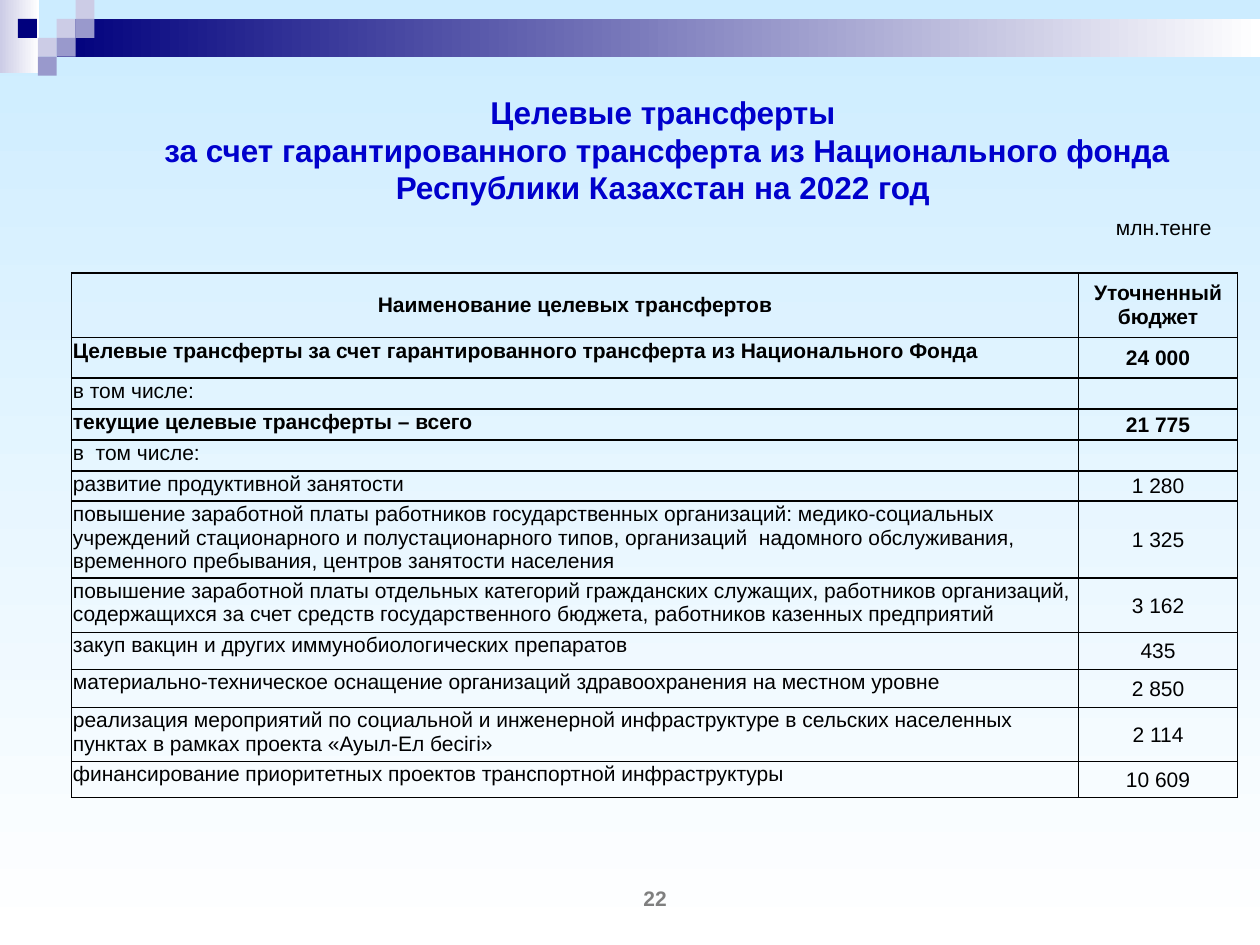
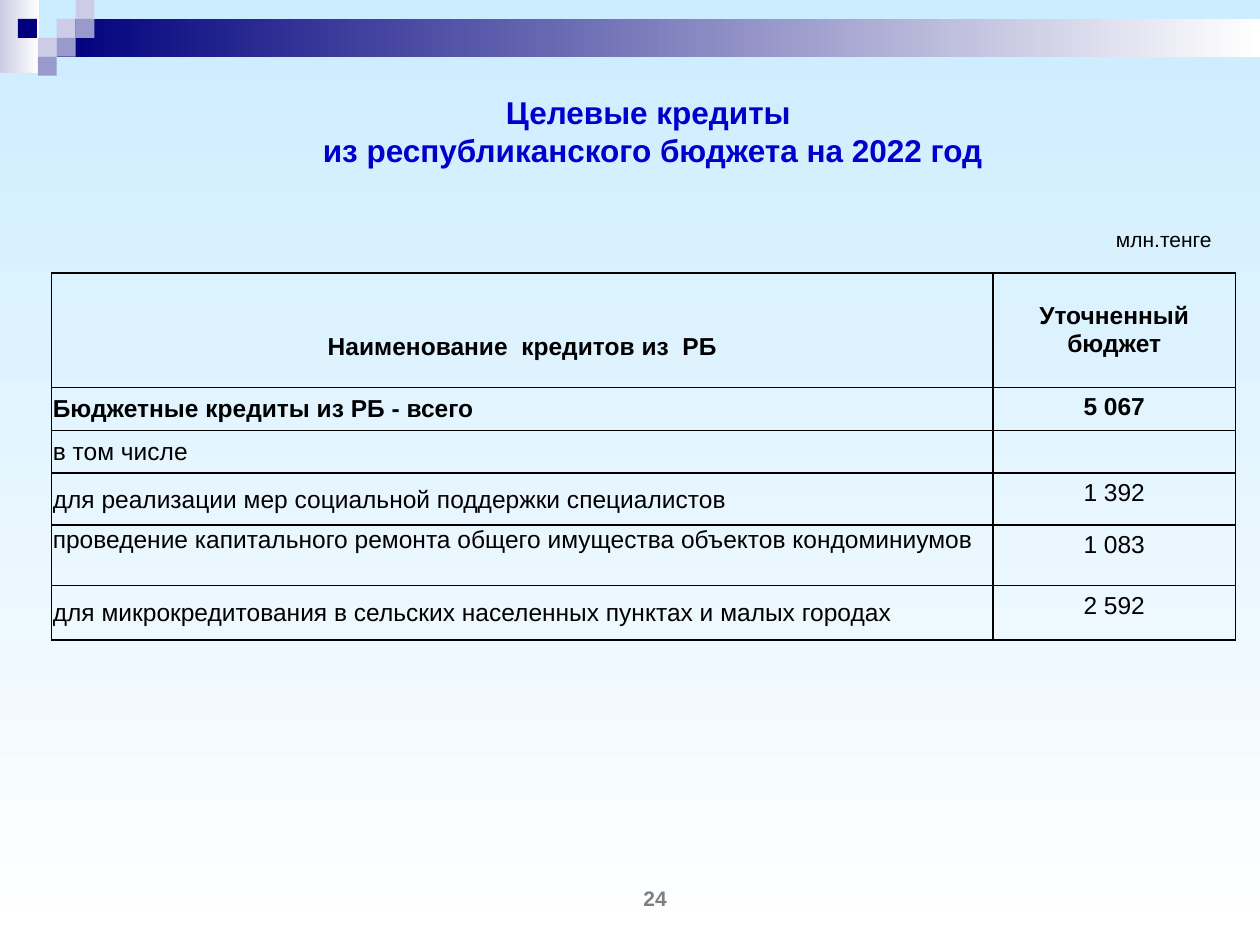
from lxml import etree
from pptx import Presentation
from pptx.dml.color import RGBColor
from pptx.enum import shapes, text
from pptx.oxml.ns import qn
from pptx.util import Pt

TOP = text.MSO_ANCHOR.TOP
MIDDLE = text.MSO_ANCHOR.MIDDLE
LEFT = text.PP_ALIGN.LEFT
CENTER = text.PP_ALIGN.CENTER
RIGHT = text.PP_ALIGN.RIGHT
TIGHT = (0.7, 0.7, 0.7, 0)
ROOMY = (7.2, 3.6, 7.2, 3.6)

GUARANTEED_TRANSFERS = [
    ("Наименование целевых трансфертов", "Уточненный бюджет", 37, True),
    ("Целевые трансферты за счет гарантированного трансферта из Национального Фонда",
     "24 000", 23, True),
    ("в том числе:", "", 17.7, False),
    ("текущие целевые трансферты – всего", "21 775", 17.7, True),
    ("в  том числе:", "", 17.7, False),
    ("развитие продуктивной занятости", "1 280", 17.4, False),
    ("повышение заработной платы работников государственных организаций: "
     "медико-социальных учреждений стационарного и полустационарного типов, "
     "организаций  надомного обслуживания, временного пребывания, "
     "центров занятости населения", "1 325", 41, False),
    ("повышение заработной платы отдельных категорий гражданских служащих, "
     "работников организаций, содержащихся за счет средств государственного "
     "бюджета, работников казенных предприятий", "3 162", 31, False),
    ("закуп вакцин и других иммунобиологических препаратов", "435", 21.4, False),
    ("материально-техническое оснащение организаций здравоохранения на местном уровне",
     "2 850", 21.6, False),
    ("реализация мероприятий по социальной и инженерной инфраструктуре в сельских "
     "населенных пунктах в рамках проекта «Ауыл-Ел бесігі»", "2 114", 31, False),
    ("финансирование приоритетных проектов транспортной инфраструктуры",
     "10 609", 20.6, False),
]

BUDGET_CREDITS = [
    ("Наименование  кредитов из  РБ", "Уточненный бюджет", 65.4, True),
    ("Бюджетные кредиты из РБ - всего", "5 067", 24.5, True),
    ("в том числе", "", 24.5, False),
    ("для реализации мер социальной поддержки специалистов", "1 392", 29.6, False),
    ("проведение капитального ремонта общего имущества объектов кондоминиумов",
     "1 083", 34.6, False),
    ("для микрокредитования в сельских населенных пунктах и малых городах",
     "2 592", 31.2, False),
]


def color(value):
    return RGBColor.from_string(value)


class Deck:
    font = "Arial"
    black, title_blue, gray = "000000", "0000CC", "7F7F7F"
    navy, violet, lilac = "00007D", "9999CC", "CCCCE6"
    sky, white = "CCECFF", "FFFFFF"

    def __init__(self):
        self.presentation = Presentation()
        self.presentation.slide_width = Pt(720)
        self.presentation.slide_height = Pt(540)
        self.slide = None

    def new_slide(self, title, title_left, title_top, unit_top, number):
        self.slide = self.presentation.slides.add_slide(self.presentation.slide_layouts[6])
        self.gradient(self.slide.background.fill, self.sky, 270)
        self.ornament()
        self.label(title, title_left, title_top, 687, 34, 18, self.title_blue, True)
        self.label("млн.тенге", 600, unit_top, 99.4, 17.3, 12, self.black, align=RIGHT)
        self.label(number, 302.4, 504.7, 144, 17.3, 12, self.gray, True)

    def gradient(self, fill, start, angle):
        fill.gradient()
        fill.gradient_angle = angle
        for stop, value in zip(fill.gradient_stops, (start, self.white)):
            stop.color.rgb = color(value)

    def rectangle(self, left, top, width, height, value, fading=False):
        shape = self.slide.shapes.add_shape(
            shapes.MSO_SHAPE.RECTANGLE, Pt(left), Pt(top), Pt(width), Pt(height))
        shape.shadow.inherit = False
        shape.line.fill.background()
        if fading:
            self.gradient(shape.fill, value, 0)
        else:
            shape.fill.solid()
            shape.fill.fore_color.rgb = color(value)

    def ornament(self):
        side = 10.8
        self.rectangle(0, 0, 22.3, 41.8, self.lilac, fading=True)
        self.rectangle(3 * side, side, 720 - 3 * side, 2 * side, self.navy, fading=True)
        squares = [(3, 1, self.lilac), (4, 0, self.lilac), (4, 1, self.violet),
                   (2, 2, self.lilac), (0.95, 1, self.navy), (3, 2, self.violet),
                   (2, 3, self.violet)]
        for column, row, value in squares:
            self.rectangle(column * side, row * side, side, side, value)

    def style(self, paragraph, size, value, bold, align):
        paragraph.alignment = align
        paragraph.font.name = self.font
        paragraph.font.size = Pt(size)
        paragraph.font.bold = bold
        paragraph.font.color.rgb = color(value)

    def label(self, content, left, top, width, height, size, value, bold=False, align=CENTER):
        box = self.slide.shapes.add_textbox(Pt(left), Pt(top), Pt(width), Pt(height))
        frame = box.text_frame
        frame.word_wrap = True
        frame.vertical_anchor = MIDDLE
        frame.text = content
        self.style(frame.paragraphs[0], size, value, bold, align)

    def border(self, cell):
        properties = cell._tc.get_or_add_tcPr()
        for position, side in enumerate(("lnL", "lnR", "lnT", "lnB")):
            line = etree.Element(qn(f"a:{side}"), w=str(Pt(1)))
            fill = etree.SubElement(line, qn("a:solidFill"))
            etree.SubElement(fill, qn("a:srgbClr"), val=self.black)
            properties.insert(position, line)

    def cell(self, cell, content, size, bold, align, anchor, margins):
        cell.text = content
        cell.vertical_anchor = anchor
        (cell.margin_left, cell.margin_top,
         cell.margin_right, cell.margin_bottom) = map(Pt, margins)
        cell.fill.background()
        self.border(cell)
        self.style(cell.text_frame.paragraphs[0], size, self.black, bold, align)

    def table(self, rows, left, widths, size, name_anchor, value_anchor, value_margins):
        height = sum(row[2] for row in rows)
        table = self.slide.shapes.add_table(
            len(rows), 2, Pt(left), Pt(156), Pt(sum(widths)), Pt(height)).table
        table.first_row = table.horz_banding = False
        for column, width in zip(table.columns, widths):
            column.width = Pt(width)
        for index, (name, value, row_height, bold) in enumerate(rows):
            table.rows[index].height = Pt(row_height)
            name_cell, value_cell = table.rows[index].cells
            if index == 0:
                name_style = value_style = (CENTER, MIDDLE, ROOMY)
            else:
                name_style = (LEFT, name_anchor, TIGHT)
                value_style = (CENTER, value_anchor, value_margins if value else TIGHT)
            self.cell(name_cell, name, size, bold, *name_style)
            self.cell(value_cell, value, size, bold, *value_style)
        return table


def main():
    deck = Deck()

    deck.new_slide("Целевые трансферты\v за счет гарантированного трансферта из "
                   "Национального фонда Республики Казахстан на 2022 год",
                   35.3, 68.4, 121, "22")
    deck.table(GUARANTEED_TRANSFERS, 41, (575.4, 90.8), 12, TOP, MIDDLE, TIGHT)

    deck.new_slide("Целевые кредиты \vиз республиканского бюджета на 2022 год",
                   29.5, 57.6, 128.2, "24")
    credits = deck.table(BUDGET_CREDITS, 29.5, (538, 138.4), 14, MIDDLE, TOP, ROOMY)
    credits.cell(0, 0).margin_top = Pt(22.6)
    credits.cell(4, 0).vertical_anchor = TOP

    deck.presentation.save("out.pptx")


if __name__ == "__main__":
    main()
